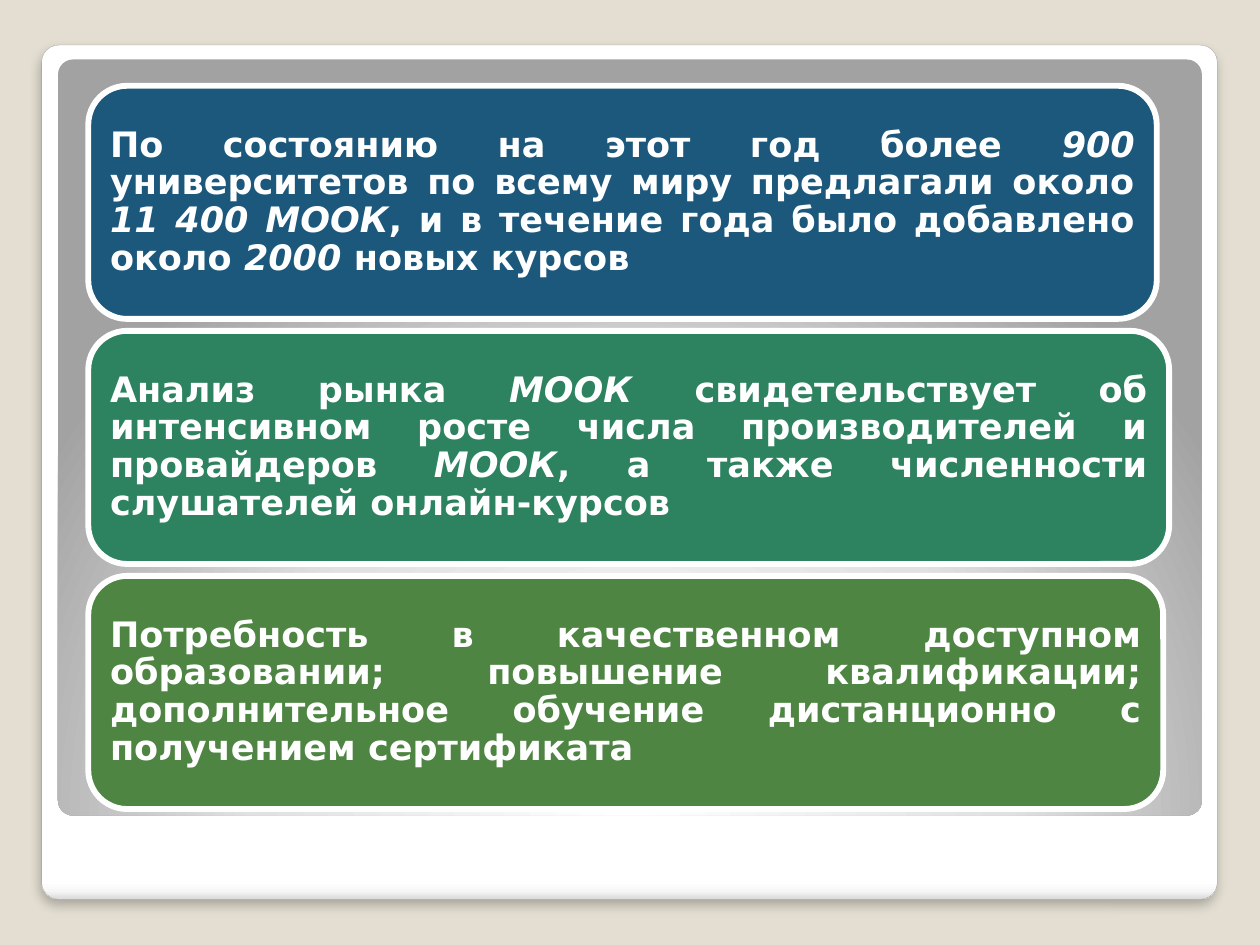
from dataclasses import dataclass

from lxml import etree
from pptx import Presentation
from pptx.dml.color import RGBColor
from pptx.enum.shapes import MSO_SHAPE
from pptx.enum.text import MSO_ANCHOR, PP_ALIGN
from pptx.oxml.ns import qn
from pptx.util import Cm, Pt

ROUNDED = MSO_SHAPE.ROUNDED_RECTANGLE
MIDDLE = MSO_ANCHOR.MIDDLE
JUSTIFY = PP_ALIGN.JUSTIFY
BLANK_LAYOUT = 6


@dataclass(frozen=True)
class Theme:
    background: str = "E3DED1"
    frame_line: str = "A4A4A4"
    shadow: str = "000000"
    light: str = "FFFFFF"
    font: str = "DejaVu Sans"
    text_size: float = 20
    card_line: float = 3.35
    frame_stops: tuple = ((0, "FFFFFF"), (98, "FFFFFF"), (99, "F7F7F7"), (100, "DADADA"))
    panel_stops: tuple = ((0, "FFFFFF"), (55, "E1E1E1"), (100, "A2A2A2"))


THEME = Theme()

CARD_LEFT, CARD_TOP, CARD_HEIGHT, CARD_STEP = 1.78, 1.73, 4.7, 4.94

CARDS = [
    (21.54, "1B587C", [
        ("По состоянию на этот год более ", False),
        ("900", True),
        (" университетов по всему миру предлагали около ", False),
        ("11 400 MOOК", True),
        (", и в течение года было добавлено около ", False),
        ("2000", True),
        (" новых курсов", False),
    ]),
    (21.79, "2D8260", [
        ("Анализ рынка ", False),
        ("МООК ", True),
        ("свидетельствует об интенсивном росте числа производителей и провайдеров ", False),
        ("МООК", True),
        (", а также численности слушателей онлайн-курсов", False),
    ]),
    (21.67, "4E8542", [
        ("Потребность в качественном доступном образовании; повышение квалификации; "
         "дополнительное обучение дистанционно с получением сертификата", False),
    ]),
]


def color(value):
    return RGBColor.from_string(value)


def add_child(parent, tag, **attributes):
    values = {name: str(value) for name, value in attributes.items()}
    return etree.SubElement(parent, qn(tag), values)


def add_rounded(slide, left, top, width, height):
    shape = slide.shapes.add_shape(ROUNDED, Cm(left), Cm(top), Cm(width), Cm(height))
    shape.shadow.inherit = False
    return shape


def fill_gradient(shape, stops):
    shape.fill.background()
    properties = shape.element.spPr
    empty_fill = properties.find(qn("a:noFill"))
    gradient = etree.Element(qn("a:gradFill"), rotWithShape="1")
    stop_list = add_child(gradient, "a:gsLst")
    for position, value in stops:
        stop = add_child(stop_list, "a:gs", pos=position * 1000)
        add_child(stop, "a:srgbClr", val=value)
    properties.replace(empty_fill, gradient)
    return gradient


def add_drop_shadow(shape):
    effects = shape.element.spPr.find(qn("a:effectLst"))
    shadow = add_child(effects, "a:outerShdw", blurRad=Pt(6), dist=Pt(4),
                       dir=90 * 60000, algn="t", rotWithShape=0)
    shade = add_child(shadow, "a:srgbClr", val=THEME.shadow)
    add_child(shade, "a:alpha", val=25000)


def add_frame(slide):
    frame = add_rounded(slide, 0.84, 0.91, 23.7, 17.22)
    frame.adjustments[0] = 0.02
    frame.line.color.rgb = color(THEME.frame_line)
    frame.line.width = Pt(0.16)
    gradient = fill_gradient(frame, THEME.frame_stops)
    add_child(gradient, "a:lin", ang=90 * 60000, scaled=0)
    add_drop_shadow(frame)


def add_panel(slide):
    panel = add_rounded(slide, 1.17, 1.2, 23.06, 15.24)
    panel.adjustments[0] = 0.02
    panel.line.fill.background()
    gradient = fill_gradient(panel, THEME.panel_stops)
    circle = add_child(gradient, "a:path", path="circle")
    add_child(circle, "a:fillToRect", l=50000, t=175000, r=50000, b=-75000)


def add_runs(paragraph, runs):
    for text, italic in runs:
        run = paragraph.add_run()
        run.text = text
        run.font.name = THEME.font
        run.font.size = Pt(THEME.text_size)
        run.font.color.rgb = color(THEME.light)
        run.font.bold = True
        run.font.italic = italic


def add_card(slide, top, width, fill, runs):
    card = add_rounded(slide, CARD_LEFT, top, width, CARD_HEIGHT)
    card.fill.solid()
    card.fill.fore_color.rgb = color(fill)
    card.line.color.rgb = color(THEME.light)
    card.line.width = Pt(THEME.card_line)
    frame = card.text_frame
    frame.word_wrap = True
    frame.vertical_anchor = MIDDLE
    frame.margin_left = frame.margin_right = Cm(0.21)
    frame.margin_top = frame.margin_bottom = Cm(0.11)
    paragraph = frame.paragraphs[0]
    paragraph.alignment = JUSTIFY
    paragraph.line_spacing = 0.9
    paragraph.space_after = Pt(7)
    add_runs(paragraph, runs)


def main():
    presentation = Presentation()
    presentation.slide_width = Cm(25.4)
    presentation.slide_height = Cm(19.05)
    slide = presentation.slides.add_slide(presentation.slide_layouts[BLANK_LAYOUT])
    slide.background.fill.solid()
    slide.background.fill.fore_color.rgb = color(THEME.background)
    add_frame(slide)
    add_panel(slide)
    for index, (width, fill, runs) in enumerate(CARDS):
        add_card(slide, CARD_TOP + index * CARD_STEP, width, fill, runs)
    presentation.save("out.pptx")


if __name__ == "__main__":
    main()
